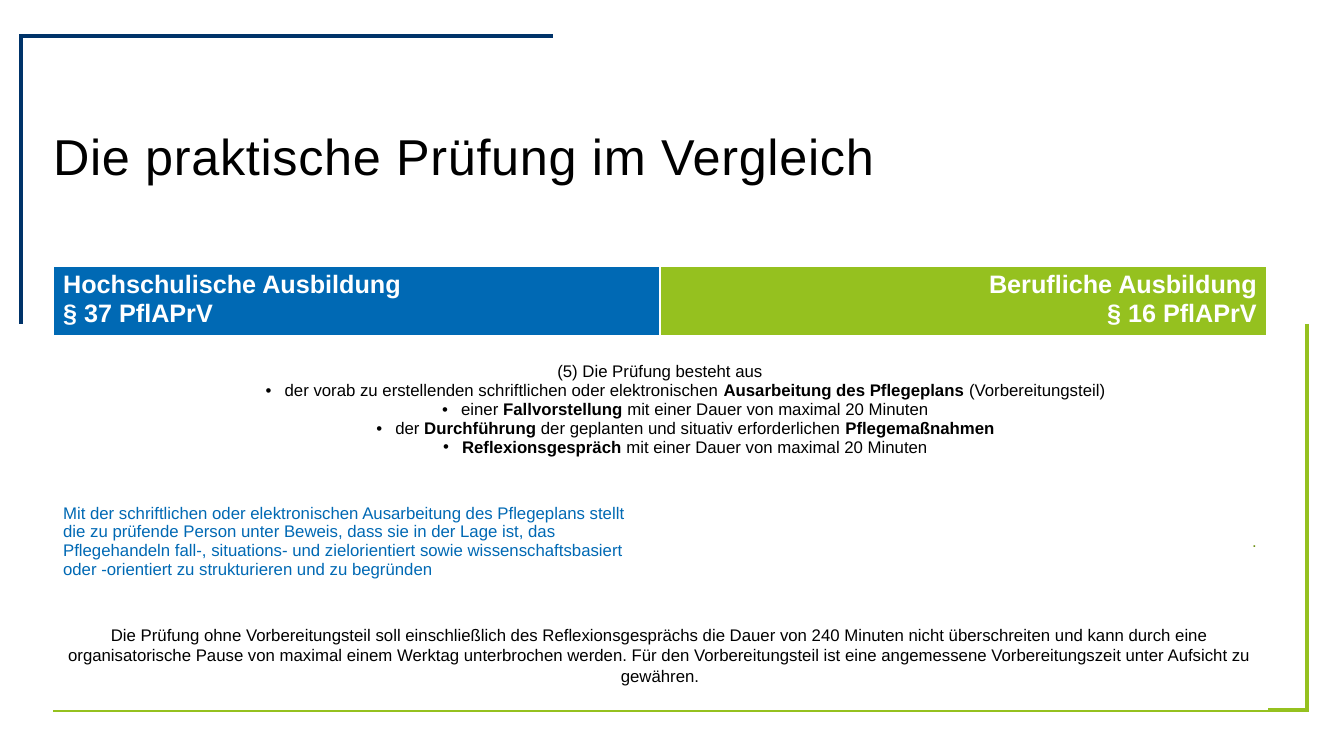
from dataclasses import dataclass

from lxml import etree
from pptx import Presentation
from pptx.dml.color import RGBColor
from pptx.enum.text import MSO_ANCHOR, MSO_AUTO_SIZE, PP_ALIGN
from pptx.oxml.ns import qn
from pptx.util import Emu, Pt

LEFT, CENTER, RIGHT = PP_ALIGN.LEFT, PP_ALIGN.CENTER, PP_ALIGN.RIGHT
TOP, MIDDLE = MSO_ANCHOR.TOP, MSO_ANCHOR.MIDDLE
NO_GRID_STYLE = "{2D5ABB26-0587-4C30-8999-92F81FD0307C}"
EMU_PER_PX = 914400 / 100.8


@dataclass(frozen=True)
class Theme:
    font: str = "Arial"
    black: str = "000000"
    white: str = "FFFFFF"
    navy: str = "003369"
    blue: str = "0069B4"
    green: str = "95C11F"
    dark_green: str = "709117"
    title: int = 36
    header: int = 18
    body: int = 12


T = Theme()


@dataclass(frozen=True)
class Run:
    text: str
    bold: bool = False


@dataclass(frozen=True)
class Para:
    runs: tuple[Run, ...]
    bullet: bool = False


@dataclass(frozen=True)
class CellText:
    row: int
    col: int
    paras: tuple[Para, ...]
    align: PP_ALIGN
    color: str = T.black
    size: int = T.body
    fill: str = T.white
    anchor: MSO_ANCHOR = MIDDLE
    spacing: float = 1.0


@dataclass(frozen=True)
class FrameEdge:
    row: int
    col: int
    sides: str
    color: str


def px(n: float) -> Emu:
    return Emu(round(n * EMU_PER_PX))


def add_run(p, run: Run, size: int, color: str):
    r = p.add_run()
    r.text = run.text
    r.font.name = T.font
    r.font.size = Pt(size)
    r.font.bold = run.bold
    r.font.color.rgb = RGBColor.from_string(color)
    return r


def add_bullet(p) -> None:
    p.level = 1
    pPr = p._p.get_or_add_pPr()
    pPr.set("marL", str(px(70)))
    pPr.set("indent", str(px(-19)))
    etree.SubElement(pPr, qn("a:buFont")).set("typeface", T.font)
    etree.SubElement(pPr, qn("a:buChar")).set("char", "•")


def set_border(cell, side: str, color: str, width: int) -> None:
    """Draw one side of a cell; sides must be set in the order L, R, T, B."""
    tcPr = cell._tc.get_or_add_tcPr()
    ln = etree.SubElement(tcPr, qn(f"a:ln{side}"), w=str(Pt(width)))
    fill = etree.SubElement(ln, qn("a:solidFill"))
    etree.SubElement(fill, qn("a:srgbClr")).set("val", color)


def add_grid(s, left: int, top: int, cols: list[int], rows: list[int]):
    """Add an unstyled table with the given column widths and row heights."""
    gf = s.shapes.add_table(len(rows), len(cols), px(left), px(top),
                            px(sum(cols)), px(sum(rows)))
    table = gf.table
    table.first_row = table.horz_banding = False
    table._tbl.tblPr.find(qn("a:tableStyleId")).text = NO_GRID_STYLE
    for col, width in zip(table.columns, cols):
        col.width = px(width)
    for row, height in zip(table.rows, rows):
        row.height = px(height)
    return table


def fill_cell(table, item: CellText) -> None:
    cell = table.cell(item.row, item.col)
    cell.fill.solid()
    cell.fill.fore_color.rgb = RGBColor.from_string(item.fill)
    cell.vertical_anchor = item.anchor
    tf = cell.text_frame
    for i, para in enumerate(item.paras):
        p = tf.add_paragraph() if i else tf.paragraphs[0]
        p.alignment = item.align
        p.line_spacing = item.spacing
        if para.bullet:
            add_bullet(p)
        for run in para.runs:
            add_run(p, run, item.size, item.color)


def header(col: int, lines: tuple[str, ...], align: PP_ALIGN, fill: str) -> CellText:
    paras = tuple(Para((Run(line, True),)) for line in lines)
    return CellText(0, col, paras, align, T.white, T.header, fill, TOP)


def plain(text: str) -> tuple[Para, ...]:
    return (Para((Run(text),)),)


FRAME = (
    FrameEdge(0, 0, "LT", T.navy),
    FrameEdge(0, 1, "T", T.navy),
    FrameEdge(1, 1, "RB", T.green),
    FrameEdge(1, 2, "RB", T.green),
)

EXAM_PARTS = (
    Para((Run("(5) Die Prüfung besteht aus"),)),
    Para((Run("der vorab zu erstellenden schriftlichen oder elektronischen "),
          Run("Ausarbeitung des Pflegeplans ", True),
          Run("(Vorbereitungsteil)")), True),
    Para((Run("einer "), Run("Fallvorstellung", True),
          Run(" mit einer Dauer von maximal 20 Minuten")), True),
    Para((Run("der "), Run("Durchführung", True),
          Run(" der geplanten und situativ erforderlichen "),
          Run("Pflegemaßnahmen", True)), True),
    Para((Run("Reflexionsgespräch", True),
          Run(" mit einer Dauer von maximal 20 Minuten")), True),
)

CELLS = (
    header(0, ("Hochschulische Ausbildung", "§ 37 PflAPrV"), LEFT, T.blue),
    header(1, ("Berufliche Ausbildung", "§ 16 PflAPrV"), RIGHT, T.green),
    CellText(1, 0, EXAM_PARTS, CENTER),
    CellText(2, 0, plain(
        "Mit der schriftlichen oder elektronischen Ausarbeitung des Pflegeplans "
        "stellt die zu prüfende Person unter Beweis, dass sie in der Lage ist, das "
        "Pflegehandeln fall-, situations- und zielorientiert sowie "
        "wissenschaftsbasiert oder -orientiert zu strukturieren und zu begründen"),
        LEFT, T.blue),
    CellText(2, 1, plain("."), RIGHT, T.dark_green),
    CellText(3, 0, plain(
        "Die Prüfung ohne Vorbereitungsteil soll einschließlich des "
        "Reflexionsgesprächs die Dauer von 240 Minuten nicht überschreiten und kann "
        "durch eine organisatorische Pause von maximal einem Werktag unterbrochen "
        "werden. Für den Vorbereitungsteil ist eine angemessene Vorbereitungszeit "
        "unter Aufsicht zu gewähren."), CENTER, spacing=1.1),
)


def add_frame(s) -> None:
    table = add_grid(s, 21, 36, [32, 500, 754], [288, 386])
    table.cell(0, 0).merge(table.cell(0, 1))
    table.cell(1, 1).merge(table.cell(1, 2))
    for edge in FRAME:
        for side in edge.sides:
            set_border(table.cell(edge.row, edge.col), side, edge.color, 3)


def add_title(s, text: str) -> None:
    sp = s.shapes.title
    sp.left, sp.top, sp.width, sp.height = px(53), px(132), px(1223), px(66)
    tf = sp.text_frame
    tf.margin_left = tf.margin_right = tf.margin_top = tf.margin_bottom = 0
    tf.vertical_anchor = TOP
    tf.auto_size = MSO_AUTO_SIZE.NONE
    tf.word_wrap = True
    p = tf.paragraphs[0]
    p.alignment = LEFT
    p.line_spacing = 0.9
    r = add_run(p, Run(text), T.title, T.black)
    r.font._element.set("spc", "50")


def add_comparison(s) -> None:
    rows = [71, 145, 119, 108]
    table = add_grid(s, 53, 266, [607, 607], rows)
    for row in range(len(rows)):
        for col in range(2):
            for side in "LRTB":
                width = 3 if (row, side) in ((0, "B"), (1, "T")) else 1
                set_border(table.cell(row, col), side, T.white, width)
    for row in (1, 3):
        table.cell(row, 0).merge(table.cell(row, 1))
    for item in CELLS:
        fill_cell(table, item)


def main() -> None:
    prs = Presentation()
    prs.slide_width, prs.slide_height = px(1344), px(756)
    s = prs.slides.add_slide(prs.slide_layouts[5])
    add_frame(s)
    add_title(s, "Die praktische Prüfung im Vergleich")
    add_comparison(s)
    prs.save("out.pptx")


if __name__ == "__main__":
    main()
